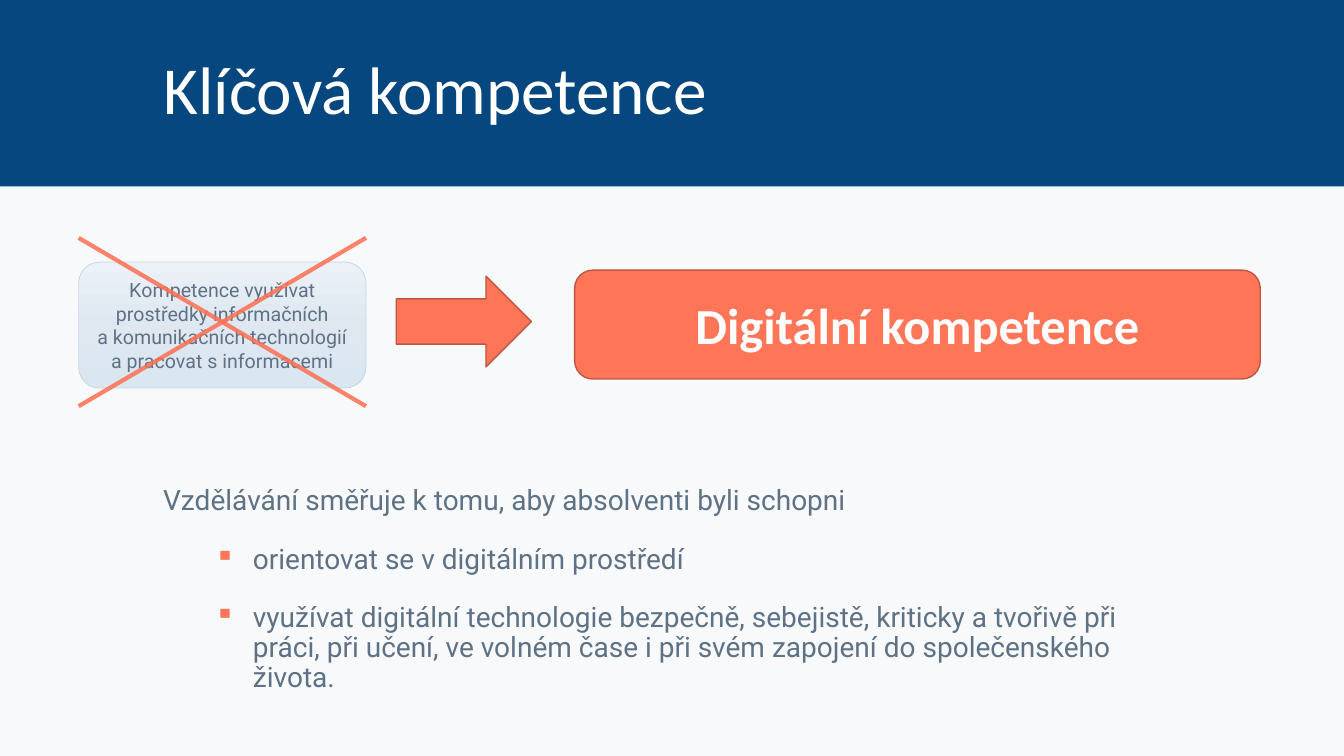
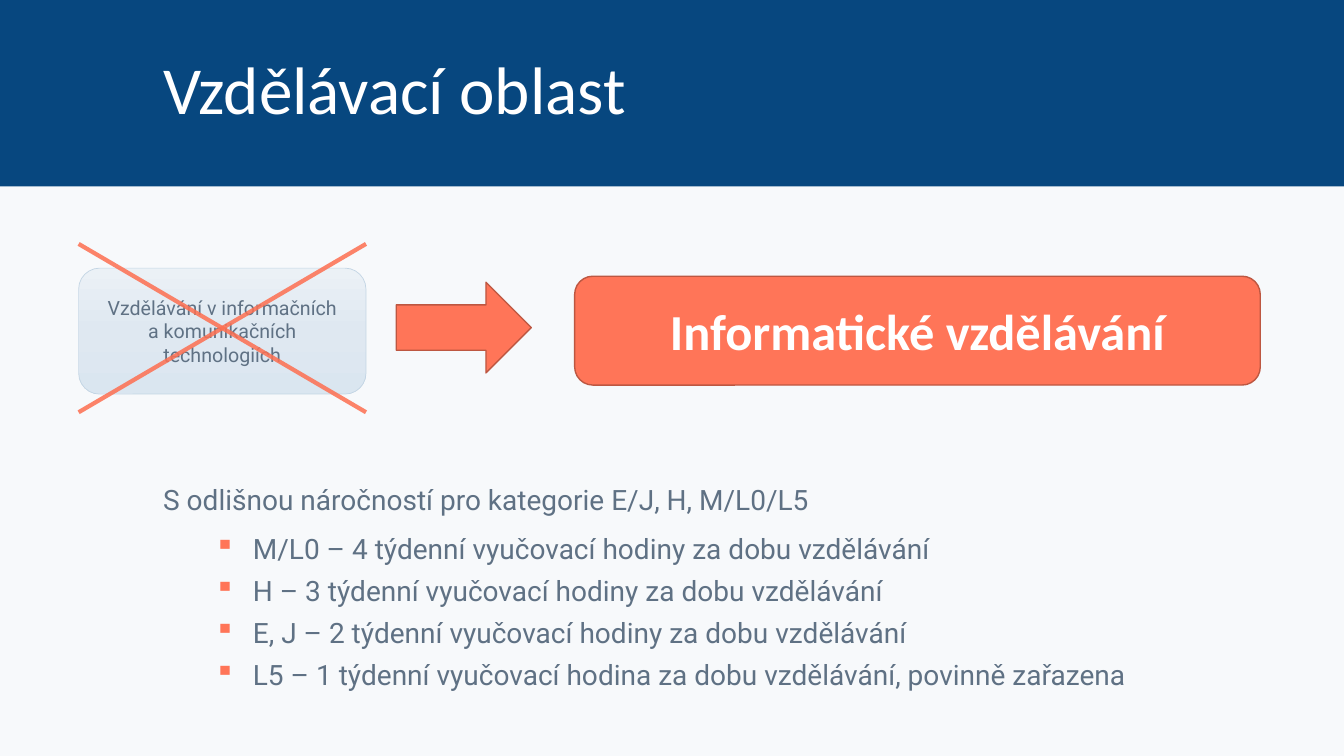
import copy

import pptx
import pptx.util
from lxml import etree
from pptx.dml.color import RGBColor
from pptx.enum.shapes import MSO_CONNECTOR, MSO_SHAPE
from pptx.enum.text import MSO_ANCHOR, MSO_AUTO_SIZE, PP_ALIGN
from pptx.oxml.ns import qn
from pptx.util import Inches, Pt

NAVY = RGBColor(0x07, 0x47, 0x7F)
PAPER = RGBColor(0xF7, 0xF9, 0xFB)
WHITE = RGBColor(0xFF, 0xFF, 0xFF)
SLATE = RGBColor(0x5F, 0x71, 0x84)
CORAL = RGBColor(0xFF, 0x75, 0x58)
CORAL_EDGE = RGBColor(0xBD, 0x57, 0x41)
CROSS = RGBColor(0xFD, 0x70, 0x52)
BOX_EDGE = RGBColor(0xC3, 0xD5, 0xE4)
BOX_GRADIENT = (
    (0, RGBColor(0xEB, 0xF1, 0xF6)),
    (0.5, RGBColor(0xDF, 0xE8, 0xF1)),
    (1, RGBColor(0xDA, 0xE6, 0xF0)),
)
HEAD_FONT, BODY_FONT = "Calibri", "Roboto"

WIDTH, HEIGHT, BAND = 13.33, 7.5, 1.85
MARGIN = 1.52
OLD_X, OLD_W = 0.78, 2.85
CROSS_H = 1.67

# row: top of the replacement row; bullets: line spacing, space before, space after
SLIDES = [
    {
        "title": "Klíčová kompetence",
        "row": 2.36,
        "old": "Kompetence využívat prostředky informačních\n"
               "a komunikačních technologií a pracovat s informacemi",
        "new": "Digitální kompetence",
        "lead": "Vzdělávání směřuje k tomu, aby absolventi byli schopni",
        "bullets": (0.9, 10, 10),
        "items": [
            "orientovat se v digitálním prostředí",
            "využívat digitální technologie bezpečně, sebejistě, kriticky a tvořivě při "
            "práci, při učení, ve volném čase i při svém zapojení do společenského života.",
        ],
    },
    {
        "title": "Vzdělávací oblast",
        "row": 2.42,
        "old": "Vzdělávání v informačních\na komunikačních technologiích",
        "new": "Informatické vzdělávání",
        "lead": "S odlišnou náročností pro kategorie E/J, H, M/L0/L5",
        "bullets": (1.0, 0, 6),
        "items": [
            "M/L0 – 4 týdenní vyučovací hodiny za dobu vzdělávání",
            "H – 3 týdenní vyučovací hodiny za dobu vzdělávání",
            "E, J – 2 týdenní vyučovací hodiny za dobu vzdělávání",
            "L5 – 1 týdenní vyučovací hodina za dobu vzdělávání, povinně zařazena",
        ],
    },
]


def style_runs(p, font, size, color, bold=False):
    for r in p.runs:
        r.font.name, r.font.size, r.font.bold = font, Pt(size), bold
        r.font.color.rgb = color


def add_block(s, preset, x, y, w, h, fill, edge=None, edge_width=1):
    sp = s.shapes.add_shape(preset, Inches(x), Inches(y), Inches(w), Inches(h))
    sp.shadow.inherit = False
    if isinstance(fill, RGBColor):
        sp.fill.solid()
        sp.fill.fore_color.rgb = fill
    else:
        set_gradient(sp, fill)
    if edge is None:
        sp.line.fill.background()
    else:
        sp.line.color.rgb = edge
        sp.line.width = Pt(edge_width)
    return sp


def set_gradient(sp, stops):
    """Fill from top to bottom with any number of stops."""
    sp.fill.gradient()
    sp.fill.gradient_angle = 270
    gs_list = sp.element.find(".//" + qn("a:gsLst"))
    while len(gs_list) < len(stops):
        gs_list.append(copy.deepcopy(gs_list[0]))
    for stop, (position, color) in zip(sp.fill.gradient_stops, stops):
        stop.position = position
        stop.color.rgb = color


def label(sp, text, font, size, color, bold=False):
    tf = sp.text_frame
    tf.word_wrap = True
    tf.vertical_anchor = MSO_ANCHOR.MIDDLE
    p = tf.paragraphs[0]
    p.text = text
    p.alignment = PP_ALIGN.CENTER
    style_runs(p, font, size, color, bold)


def add_cross(s, top):
    left, right = OLD_X, OLD_X + OLD_W
    for x1, x2 in ((left, right), (right, left)):
        line = s.shapes.add_connector(MSO_CONNECTOR.STRAIGHT, Inches(x1),
                                      Inches(top + CROSS_H), Inches(x2), Inches(top))
        line.line.color.rgb = CROSS
        line.line.width = Pt(3)
        color = line.element.find(".//" + qn("a:srgbClr"))
        etree.SubElement(color, qn("a:alpha"), val="85000")
        etree.SubElement(line.element.spPr, qn("a:effectLst"))


def add_bullet(p):
    pPr = p._p.get_or_add_pPr()
    pPr.set("marL", str(Inches(0.89)))
    pPr.set("indent", str(Inches(-0.38)))
    color = etree.SubElement(pPr, qn("a:buClr"))
    etree.SubElement(color, qn("a:srgbClr"), val=str(CORAL))
    etree.SubElement(pPr, qn("a:buChar"), char="▪")


def add_body(s, content):
    tf = s.shapes.add_textbox(Inches(MARGIN), Inches(4.78),
                              Inches(10.06), Inches(2.5)).text_frame
    tf.word_wrap = True
    for i, text in enumerate([content["lead"], *content["items"]]):
        p = tf.add_paragraph() if i else tf.paragraphs[0]
        p.text = text
        spacing, before, after = content["bullets"] if i else (0.9, 10, 10)
        p.line_spacing = spacing
        p.space_before, p.space_after = Pt(before), Pt(after)
        if i:
            add_bullet(p)
        style_runs(p, BODY_FONT, 20, SLATE)


def add_title(s, text):
    title = s.shapes.title
    title.left, title.top = Inches(MARGIN), Inches(0.12)
    title.width, title.height = Inches(10.15), Inches(1.6)
    tf = title.text_frame
    tf.text = text
    tf.auto_size = MSO_AUTO_SIZE.NONE
    tf.vertical_anchor = MSO_ANCHOR.MIDDLE
    p = tf.paragraphs[0]
    p.alignment = PP_ALIGN.LEFT
    p.line_spacing = 0.9
    style_runs(p, HEAD_FONT, 48, WHITE)


def add_replacement(s, content):
    """Old name struck out, an arrow, and the new name."""
    top = content["row"]
    old = add_block(s, MSO_SHAPE.ROUNDED_RECTANGLE, OLD_X, top + 0.24, OLD_W, 1.25,
                    BOX_GRADIENT, BOX_EDGE, 0.5)
    label(old, content["old"], BODY_FONT, 14, SLATE)
    add_cross(s, top)
    add_block(s, MSO_SHAPE.RIGHT_ARROW, 3.93, top + 0.38, 1.34, 0.9, CORAL, CORAL_EDGE)
    new = add_block(s, MSO_SHAPE.ROUNDED_RECTANGLE, 5.7, top + 0.32, 6.8, 1.08,
                    CORAL, CORAL_EDGE)
    label(new, content["new"], HEAD_FONT, 36, WHITE, bold=True)


def main():
    prs = pptx.Presentation()
    prs.slide_width, prs.slide_height = Inches(WIDTH), Inches(HEIGHT)
    layout = prs.slide_layouts[5]
    background = prs.slide_master.background.fill
    background.solid()
    background.fore_color.rgb = PAPER
    for number, content in enumerate(SLIDES):
        s = prs.slides.add_slide(layout)
        if number == 0:
            # Layouts cannot add shapes, so the band is made here and moved there.
            band = add_block(s, MSO_SHAPE.RECTANGLE, 0, 0, WIDTH, BAND, NAVY)
            layout.shapes.element.insert(2, band.element)
        add_title(s, content["title"])
        add_body(s, content)
        add_replacement(s, content)
    prs.save("out.pptx")


if __name__ == "__main__":
    main()
